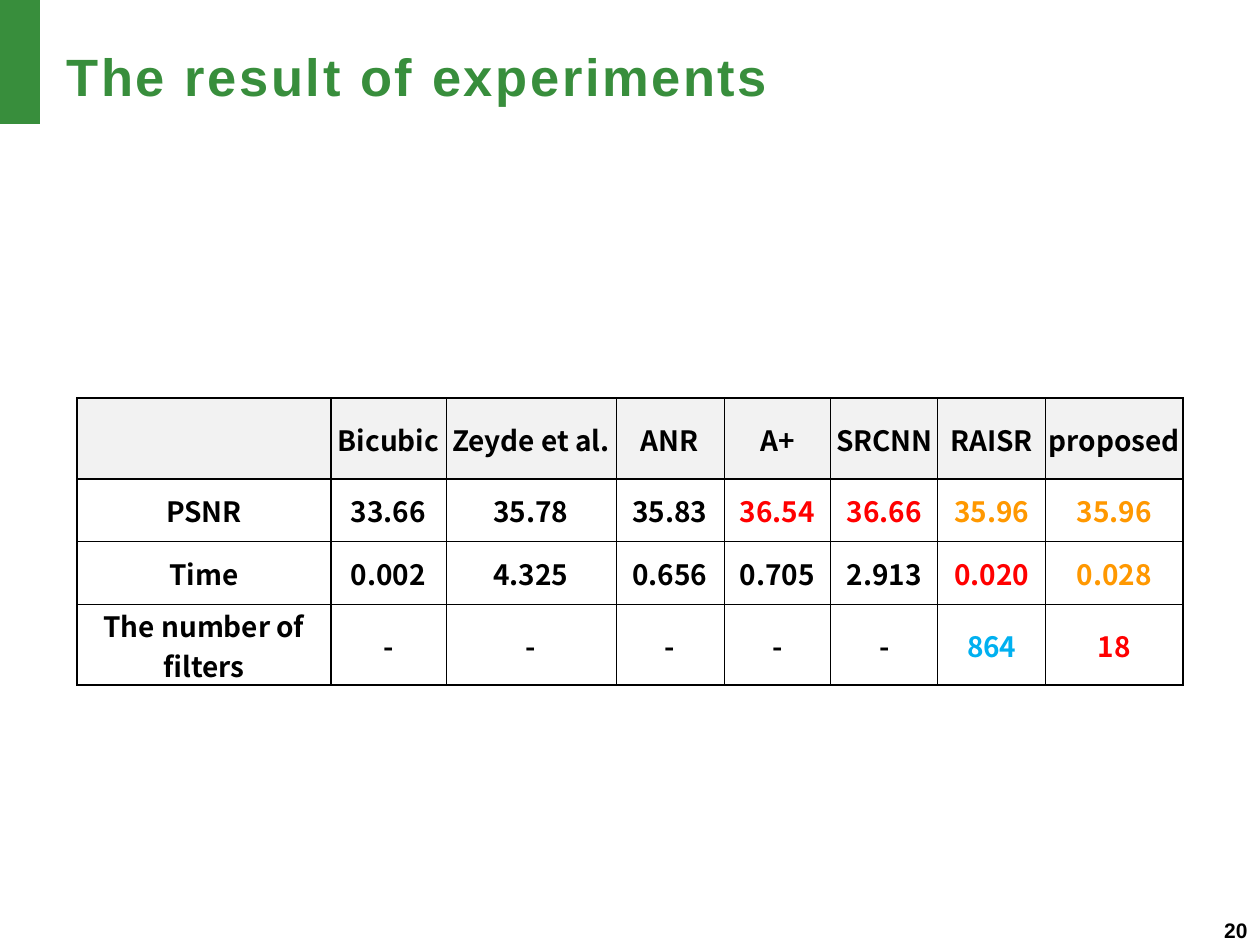
from lxml.etree import SubElement
from pptx import Presentation
from pptx.dml.color import RGBColor
from pptx.enum.shapes import MSO_SHAPE
from pptx.enum.text import MSO_ANCHOR, PP_ALIGN
from pptx.oxml.ns import qn
from pptx.util import Emu, Pt

# Content
TITLE = "The result of experiments"
PAGE_NUMBER = "20"
ROWS = [
    ["", "Bicubic", "Zeyde et al.", "ANR", "A+", "SRCNN", "RAISR", "proposed "],
    ["PSNR", "33.66", "35.78", "35.83", "36.54", "36.66", "35.96", "35.96"],
    ["Time", "0.002", "4.325", "0.656", "0.705", "2.913", "0.020", "0.028"],
    ["The number of filters", "-", "-", "-", "-", "-", "864", "18"],
]
GREEN, BLACK, HEADER_GREY = "388E3C", "000000", "F2F2F2"
RED, ORANGE, BLUE = "FF0000", "FF9800", "00B0F0"
HIGHLIGHTS = {  # (row, column): colour
    (1, 4): RED, (1, 5): RED, (1, 6): ORANGE, (1, 7): ORANGE,
    (2, 6): RED, (2, 7): ORANGE,
    (3, 6): BLUE, (3, 7): RED,
}

# Layout in px; the last row holds a label of two lines
COLUMN_WIDTHS = [254, 115, 170, 108, 107, 107, 108, 137]
ROW_HEIGHTS = [81, 62, 63, 81]
TABLE_LEFT, TABLE_TOP = 77, 398
THICK_COLUMN_EDGES = {0, 1, len(COLUMN_WIDTHS)}
THICK_ROW_EDGES = {0, 1, len(ROW_HEIGHTS)}

CELL_FORMAT = {
    "vertical_anchor": MSO_ANCHOR.MIDDLE,
    "margin_left": Emu(9144), "margin_right": Emu(9144),
    "margin_top": Emu(9144), "margin_bottom": 0,
}


def px(length):
    return Emu(round(length * 914400 / 126))


def box(*lengths):
    return [px(length) for length in lengths]


def colour(value):
    return RGBColor.from_string(value)


def set_attributes(target, values):
    for name, value in values.items():
        setattr(target, name, value)


def write(text_frame, text, size, font_name, text_colour, alignment):
    paragraph = text_frame.paragraphs[0]
    paragraph.alignment = alignment
    run = paragraph.add_run()
    run.text = text
    set_attributes(run.font, {"size": Pt(size), "name": font_name, "bold": True})
    run.font.color.rgb = colour(text_colour)
    return paragraph, run


def add_border(cell, side, points):
    line = SubElement(cell._tc.get_or_add_tcPr(), qn(f"a:ln{side}"), w=str(Pt(points)))
    fill = SubElement(line, qn("a:solidFill"))
    SubElement(fill, qn("a:srgbClr"), val=BLACK)


def edge_width(edge, thick_edges):
    return 1 if edge in thick_edges else 0.5


presentation = Presentation()
presentation.slide_width, presentation.slide_height = box(1260, 945)
slide = presentation.slides.add_slide(presentation.slide_layouts[5])

# Green corner block
block = slide.shapes.add_shape(MSO_SHAPE.RECTANGLE, *box(0, 0, 40, 124))
block.shadow.inherit = False
block.fill.solid()
block.fill.fore_color.rgb = colour(GREEN)
block.line.fill.background()

# Title
title = slide.shapes.title
set_attributes(title, dict(zip(("left", "top", "width", "height"), box(54, 34, 1159, 91))))
title.text_frame.vertical_anchor = MSO_ANCHOR.MIDDLE
paragraph, run = write(title.text_frame, TITLE, 30, "Arial", GREEN, PP_ALIGN.LEFT)
paragraph.line_spacing = 0.9
run.font._element.set("spc", "150")

# Page number
page_box = slide.shapes.add_textbox(*box(1120, 911, 140, 34))
page_box.text_frame.word_wrap = True
write(page_box.text_frame, PAGE_NUMBER, 12, "Arial", BLACK, PP_ALIGN.RIGHT)

# Results table
table = slide.shapes.add_table(
    len(ROWS), len(COLUMN_WIDTHS),
    *box(TABLE_LEFT, TABLE_TOP, sum(COLUMN_WIDTHS), sum(ROW_HEIGHTS)),
).table
set_attributes(table, {"first_row": False, "horz_banding": False})
for column, width in zip(table.columns, COLUMN_WIDTHS):
    column.width = px(width)
for row, height in zip(table.rows, ROW_HEIGHTS):
    row.height = px(height)

for i, texts in enumerate(ROWS):
    for j, text in enumerate(texts):
        cell = table.cell(i, j)
        set_attributes(cell, CELL_FORMAT)
        # Borders come before the fill in the cell properties
        add_border(cell, "L", edge_width(j, THICK_COLUMN_EDGES))
        add_border(cell, "R", edge_width(j + 1, THICK_COLUMN_EDGES))
        add_border(cell, "T", edge_width(i, THICK_ROW_EDGES))
        add_border(cell, "B", edge_width(i + 1, THICK_ROW_EDGES))
        if i == 0:
            cell.fill.solid()
            cell.fill.fore_color.rgb = colour(HEADER_GREY)
        else:
            cell.fill.background()
        if text:
            write(cell.text_frame, text, 16, "Noto Sans CJK JP",
                  HIGHLIGHTS.get((i, j), BLACK), PP_ALIGN.CENTER)

presentation.save("out.pptx")
